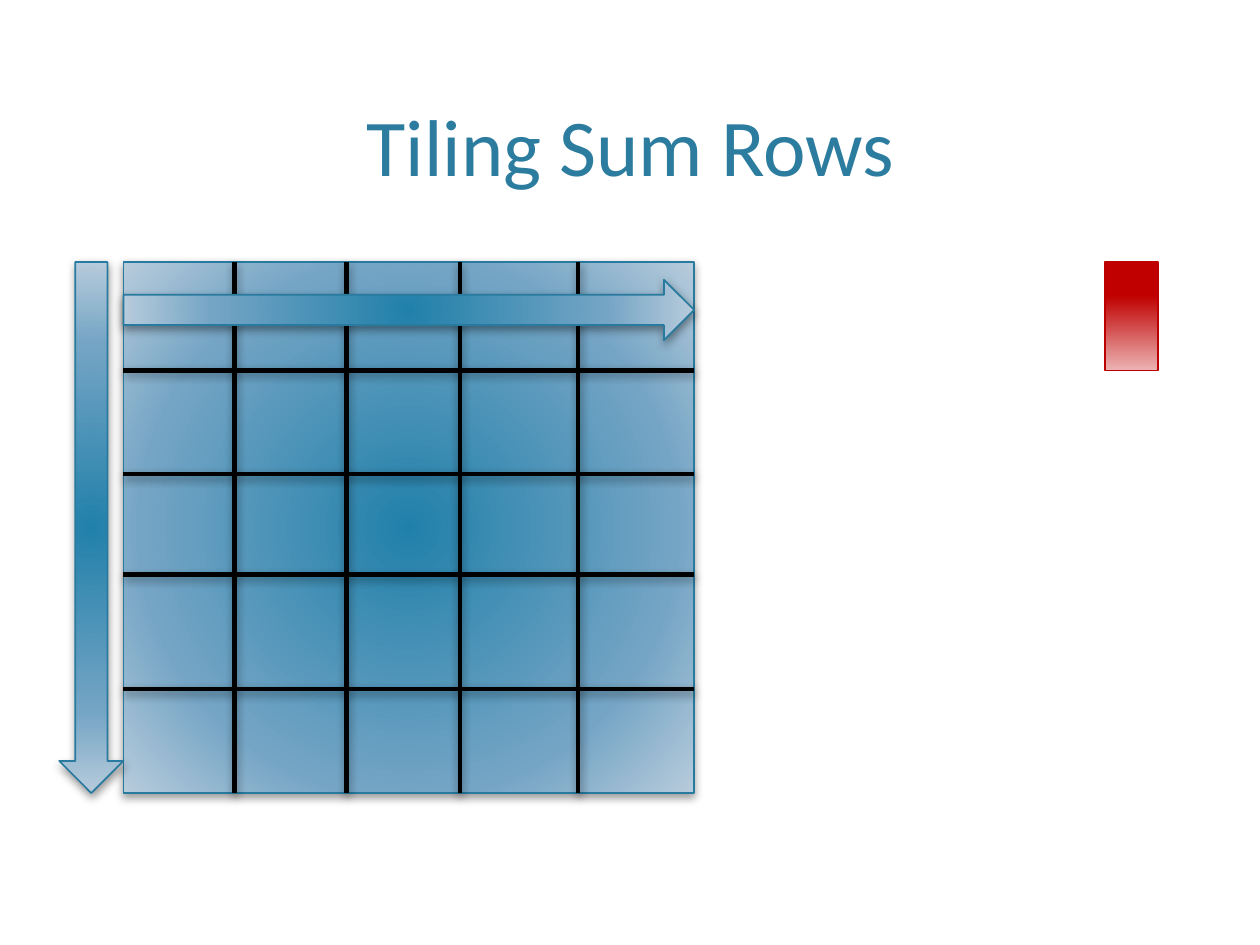
from dataclasses import dataclass

from lxml.etree import SubElement
from pptx import Presentation
from pptx.dml.color import RGBColor
from pptx.enum.shapes import MSO_CONNECTOR, MSO_SHAPE
from pptx.enum.text import MSO_ANCHOR, PP_ALIGN
from pptx.oxml.ns import qn
from pptx.util import Inches, Pt

WIDTH, HEIGHT = Inches(10), Inches(7.5)
COLUMNS = (9.8, 18.6, 27.5, 36.5, 45.9, 55.1)
ROWS = (27.73, 39.2, 50.13, 60.8, 72.93, 83.93)


@dataclass(frozen=True)
class Theme:
    """Colours, gradients and type sizes of the slide."""
    font: str = "Calibri"
    title_size: float = 46
    title: str = "2C7C9F"
    grid: str = "000000"
    grid_width: float = 2.5
    shadow: str = "000000"
    blue_edge: str = "287A9E"
    blue_stops: tuple = ((0, "2180AA"), (69, "75A5C5"), (100, "B8CCDC"))
    red_edge: str = "BC0000"
    red_stops: tuple = ((31, "C00000"), (100, "ECB3B3"))


THEME = Theme()


def across(share):
    """Turn a percentage of the slide width into a length."""
    return round(WIDTH * share / 100)


def down(share):
    """Turn a percentage of the slide height into a length."""
    return round(HEIGHT * share / 100)


def box(left, top, right, bottom):
    """Turn four edges in percent into left, top, width and height."""
    return (across(left), down(top),
            across(right) - across(left), down(bottom) - down(top))


def child(parent, tag, **attributes):
    """Append a drawing element with the given attributes."""
    return SubElement(parent, qn(f"a:{tag}"),
                      {name: str(value) for name, value in attributes.items()})


def add_shadow(effects):
    """Put a soft downward shadow in an effect list."""
    outer = child(effects, "outerShdw", blurRad=Pt(5), dist=Pt(2),
                  dir=90 * 60000, algn="ctr", rotWithShape=0)
    colour = child(outer, "srgbClr", val=THEME.shadow)
    child(colour, "alpha", val=40000)


def fill_gradient(shape, stops, radial):
    """Fill a shape with a radial or a top-to-bottom gradient."""
    shape.fill.gradient()
    gradient = shape._element.spPr.find(qn("a:gradFill"))
    for part in list(gradient):
        gradient.remove(part)
    stop_list = child(gradient, "gsLst")
    for position, colour in stops:
        stop = child(stop_list, "gs", pos=position * 1000)
        child(stop, "srgbClr", val=colour)
    if radial:
        circle = child(gradient, "path", path="circle")
        child(circle, "fillToRect", l=100000, t=100000, r=100000, b=100000)
    else:
        child(gradient, "lin", ang=90 * 60000, scaled=0)


def add_block(slide, kind, edges, stops, edge, raised):
    """Add a gradient shape; a raised one is radial and casts a shadow."""
    block = slide.shapes.add_shape(kind, *box(*edges))
    fill_gradient(block, stops, raised)
    block.line.color.rgb = RGBColor.from_string(edge)
    block.line.width = Pt(1)
    block.shadow.inherit = False
    if raised:
        add_shadow(block._element.spPr.find(qn("a:effectLst")))


def add_blue(slide, kind, *edges):
    """Add a raised blue shape."""
    add_block(slide, kind, edges, THEME.blue_stops, THEME.blue_edge, True)


def add_divider(slide, left, top, right, bottom):
    """Add one grid line with its shadow."""
    divider = slide.shapes.add_connector(
        MSO_CONNECTOR.STRAIGHT,
        across(left), down(top), across(right), down(bottom))
    divider.line.color.rgb = RGBColor.from_string(THEME.grid)
    divider.line.width = Pt(THEME.grid_width)
    add_shadow(child(divider._element.spPr, "effectLst"))


def add_title(slide, text):
    """Add the centred heading, resting on the bottom of its box."""
    heading = slide.shapes.add_textbox(*box(6, 1.6, 94, 21.07)).text_frame
    heading.word_wrap = True
    heading.vertical_anchor = MSO_ANCHOR.BOTTOM
    paragraph = heading.paragraphs[0]
    paragraph.alignment = PP_ALIGN.CENTER
    run = paragraph.add_run()
    run.text = text
    run.font.name = THEME.font
    run.font.size = Pt(THEME.title_size)
    run.font.color.rgb = RGBColor.from_string(THEME.title)


def main():
    """Build and save the slide."""
    deck = Presentation()
    deck.slide_width, deck.slide_height = WIDTH, HEIGHT
    slide = deck.slides.add_slide(deck.slide_layouts[6])
    left, *column_cuts, right = COLUMNS
    top, *row_cuts, bottom = ROWS

    add_title(slide, "Tiling Sum Rows")
    add_blue(slide, MSO_SHAPE.RECTANGLE, left, top, right, bottom)
    add_blue(slide, MSO_SHAPE.DOWN_ARROW, 4.7, top, left, bottom)
    for cut in row_cuts:
        add_divider(slide, left, cut, right, cut)
    for cut in column_cuts:
        add_divider(slide, cut, top, cut, bottom)
    add_blue(slide, MSO_SHAPE.RIGHT_ARROW, left, 29.6, right, 36)
    add_block(slide, MSO_SHAPE.RECTANGLE, (87.7, top, 91.9, row_cuts[0]),
              THEME.red_stops, THEME.red_edge, False)
    deck.save("out.pptx")


if __name__ == "__main__":
    main()
